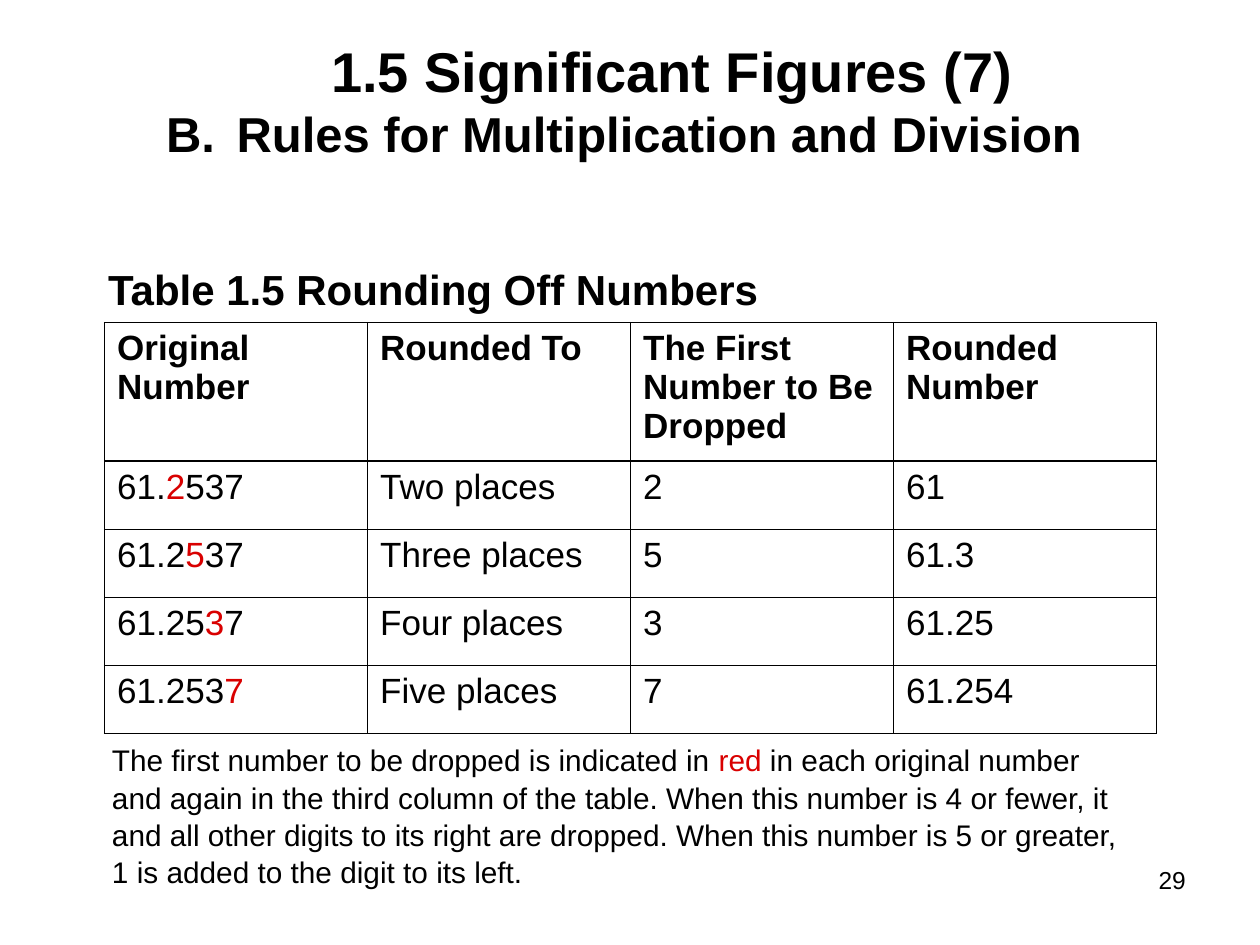
import pptx
import pptx.util
import pptx.enum.text
import pptx.dml.color
import pptx.oxml
from pptx.oxml.ns import qn

Inches, Pt = pptx.util.Inches, pptx.util.Pt
ALIGN = pptx.enum.text.PP_ALIGN
ANCHOR = pptx.enum.text.MSO_ANCHOR
COLORS = {"ink": "000000", "red": "D90000"}
FONT = "Arial"

# Content: a text is a list of (words, color) runs
TITLE = [("1.5 Significant Figures (7)", "ink")]
RULE = [("Rules for Multiplication and Division", "ink")]
CAPTION = [("Table 1.5 Rounding Off Numbers", "ink")]
NOTE = [
    ("The first number to be dropped is indicated in ", "ink"),
    ("red", "red"),
    (" in each original number and again in the third column of the table. "
     "When this number is 4 or fewer, it and all other digits to its right "
     "are dropped. When this number is 5 or greater, 1 is added to the digit "
     "to its left.", "ink"),
]
PAGE = [("29", "ink")]
HEADS = ["Original Number", "Rounded To", "The First Number to Be Dropped",
         "Rounded Number"]
NUMBER = "61.2537"
ROWS = [  # place of the dropped digit, rounded to, rounded number
    (3, "Two places", "61"),
    (4, "Three places", "61.3"),
    (5, "Four places", "61.25"),
    (6, "Five places", "61.254"),
]


def write(frame, runs, size, bold=False, align=ALIGN.LEFT, before=0):
    para = frame.paragraphs[0]
    para.alignment = align
    para.space_before = Pt(before)
    for words, color in runs:
        run = para.add_run()
        run.text = words
        font = run.font
        font.name, font.size, font.bold = FONT, Pt(size), bold
        font.color.rgb = pptx.dml.color.RGBColor.from_string(COLORS[color])
    return para


def add_text(slide, box, runs, size, **style):
    frame = slide.shapes.add_textbox(*map(Inches, box)).text_frame
    frame.word_wrap = True
    return write(frame, runs, size, **style)


def add_bullet(para, indent, start):
    props = para._p.get_or_add_pPr()
    props.set("marL", str(Inches(indent)))
    props.set("indent", str(-Inches(indent)))
    for tag, attrs in [("a:buFont", {"typeface": FONT}),
                       ("a:buAutoNum", {"type": "alphaUcPeriod",
                                        "startAt": str(start)})]:
        item = pptx.oxml.parse_xml(
            f'<{tag} xmlns:a="http://schemas.openxmlformats.org/drawingml/2006/main"/>')
        for key, value in attrs.items():
            item.set(key, value)
        props.append(item)


def add_border(cell):
    props = cell._tc.get_or_add_tcPr()
    for spot, side in enumerate(["lnL", "lnR", "lnT", "lnB"]):
        line = pptx.oxml.parse_xml(
            f'<a:{side} xmlns:a="http://schemas.openxmlformats.org/drawingml/2006/main" '
            f'w="{Pt(1)}"><a:solidFill><a:srgbClr val="{COLORS["ink"]}"/>'
            f'</a:solidFill></a:{side}>')
        props.insert(spot, line)


def add_grid(slide):
    # Every row is a list of cells, every cell a list of runs
    grid = [[[(head, "ink")] for head in HEADS]]
    for spot, places, result in ROWS:
        digit = NUMBER[spot]
        parts = [(NUMBER[:spot], "ink"), (digit, "red"),
                 (NUMBER[spot + 1:], "ink")]
        grid.append([[part for part in parts if part[0]], [(places, "ink")],
                     [(digit, "ink")], [(result, "ink")]])
    tall = [1.03] + [0.54] * len(ROWS)
    table = slide.shapes.add_table(
        len(grid), len(HEADS), Inches(0.83), Inches(2.56),
        Inches(8.35), Inches(sum(tall))).table
    table.first_row = table.horz_banding = False
    for row, height in zip(table.rows, tall):
        row.height = Inches(height)
    for r, line in enumerate(grid):
        for c, runs in enumerate(line):
            cell = table.cell(r, c)
            cell.fill.background()
            add_border(cell)
            write(cell.text_frame, runs, 20, bold=r == 0)


def main():
    deck = pptx.Presentation()
    deck.slide_width, deck.slide_height = Inches(10), Inches(7.5)
    slide = deck.slides.add_slide(deck.slide_layouts[5])

    # Title and rule
    title = slide.shapes.title
    title.left, title.top, title.width, title.height = map(
        Inches, (2.48, 0.22, 5.71, 0.67))
    title.text_frame.vertical_anchor = ANCHOR.MIDDLE
    write(title.text_frame, TITLE, 32, bold=True, align=ALIGN.CENTER)
    rule = add_text(slide, (1.22, 0.77, 7.64, 0.63), RULE, 28, bold=True,
                    before=3)
    add_bullet(rule, 0.56, 2)

    # Table with its caption and note
    add_text(slide, (0.76, 2.04, 5.65, 0.5), CAPTION, 24, bold=True, before=3)
    add_grid(slide)
    note = add_text(slide, (0.79, 5.83, 8.28, 1.38), NOTE, 17, before=2)
    note.line_spacing = 1.04

    # Page number
    add_text(slide, (8.47, 6.82, 1.04, 0.34), PAGE, 14, align=ALIGN.RIGHT)
    deck.save("out.pptx")


if __name__ == "__main__":
    main()
